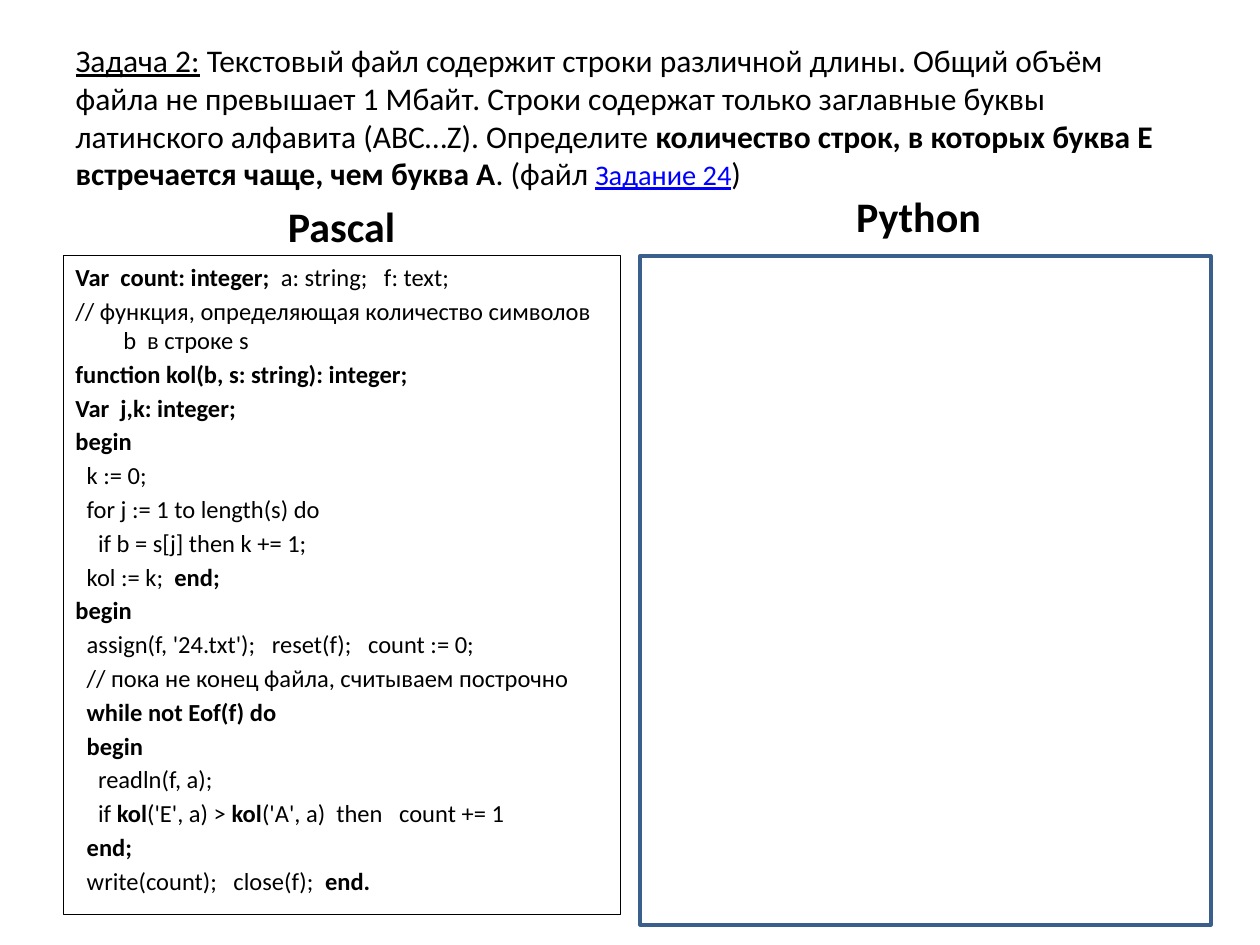
from dataclasses import dataclass

from pptx import Presentation
from pptx import util as u
from pptx.dml.color import RGBColor
from pptx.enum import shapes, text


@dataclass(frozen=True)
class Theme:
    font: str = "Calibri"
    ink: RGBColor = RGBColor(0x00, 0x00, 0x00)
    link: RGBColor = RGBColor(0x00, 0x00, 0xFF)
    paper: RGBColor = RGBColor(0xFF, 0xFF, 0xFF)
    frame: RGBColor = RGBColor(0x3A, 0x5F, 0x8C)
    task_size: float = 18
    link_size: float = 16.2
    heading_size: float = 24
    code_size: float = 14


THEME = Theme()

# Asterisks switch bold on and off; the number is the nesting level.
PASCAL_CODE = [
    (0, "*Var  count: integer;  *a: string;   f: text;"),
    (0, "// функция, определяющая количество символов b  в строке s"),
    (0, "*function kol(b, s: string): integer;"),
    (0, "*Var  j,k: integer;"),
    (0, "*begin"),
    (1, "k := 0;"),
    (1, "for j := 1 to length(s) do"),
    (2, "if b = s[j] then k += 1;"),
    (1, "kol := k;  *end;"),
    (0, "*begin"),
    (1, "assign(f, '24.txt');   reset(f);   count := 0;"),
    (1, "// пока не конец файла, считываем построчно"),
    (1, "*while not Eof(f) do"),
    (1, "*begin"),
    (2, "readln(f, a);"),
    (2, "if *kol*('E', a) > *kol*('A', a)  then   count += 1"),
    (1, "*end;"),
    (1, "write(count);   close(f);  *end."),
]


def add_run(paragraph, words, size, color=THEME.ink, bold=False, underline=False):
    run = paragraph.add_run()
    run.text = words
    font = run.font
    font.name, font.size = THEME.font, u.Pt(size)
    font.bold, font.underline = bold, underline
    font.color.rgb = color


def prepare_frame(shape, anchor):
    frame = shape.text_frame
    frame.word_wrap = True
    frame.auto_size = text.MSO_AUTO_SIZE.NONE
    frame.vertical_anchor = anchor
    return frame


def add_box(slide, box, fill, line, width):
    shape = slide.shapes.add_shape(shapes.MSO_SHAPE.RECTANGLE, *map(u.Inches, box))
    shape.shadow.inherit = False
    if fill is None:
        shape.fill.background()
    else:
        shape.fill.solid()
        shape.fill.fore_color.rgb = fill
    shape.line.color.rgb = line
    shape.line.width = u.Pt(width)
    return shape


def place_task(slide, box):
    title = slide.shapes.title
    title.left, title.top, title.width, title.height = map(u.Inches, box)
    paragraph = prepare_frame(title, text.MSO_ANCHOR.MIDDLE).paragraphs[0]
    paragraph.alignment = text.PP_ALIGN.LEFT
    size = THEME.task_size
    add_run(paragraph, "Задача 2:", size, underline=True)
    add_run(paragraph, " Текстовый файл содержит строки различной длины. "
            "Общий объём файла не превышает 1 Мбайт. Строки содержат только "
            "заглавные буквы латинского алфавита (ABC…Z). Определите ", size)
    add_run(paragraph, "количество строк, в которых буква E встречается чаще, "
            "чем буква A", size, bold=True)
    add_run(paragraph, ". (файл ", size)
    add_run(paragraph, "Задание 24", THEME.link_size, THEME.link, underline=True)
    add_run(paragraph, ")", size)


def place_heading(slide, box, words):
    shape = slide.shapes.add_textbox(*map(u.Inches, box))
    paragraph = prepare_frame(shape, text.MSO_ANCHOR.BOTTOM).paragraphs[0]
    paragraph.alignment = text.PP_ALIGN.CENTER
    add_run(paragraph, words, THEME.heading_size, bold=True)


def place_code(slide, box, lines):
    hanging, step = 0.38, 0.09
    shape = add_box(slide, box, None, THEME.ink, 0.25)
    frame = prepare_frame(shape, text.MSO_ANCHOR.TOP)
    for number, (level, line) in enumerate(lines):
        paragraph = frame.add_paragraph() if number else frame.paragraphs[0]
        paragraph.alignment = text.PP_ALIGN.LEFT
        paragraph.space_before = u.Pt(2.5 if number else 0)
        # Wrapped lines hang; each level moves the first line right
        properties = paragraph._p.get_or_add_pPr()
        properties.set("marL", str(u.Inches(hanging)))
        properties.set("indent", str(u.Inches(level * step - hanging)))
        for position, words in enumerate(line.split("*")):
            if words:
                add_run(paragraph, words, THEME.code_size, bold=position % 2 == 1)


def main():
    presentation = Presentation()
    presentation.slide_width, presentation.slide_height = u.Inches(10), u.Inches(7.5)
    slide = presentation.slides.add_slide(presentation.slide_layouts[5])
    left, right, column, top = 0.5, 5.08, 4.42, 2.03

    # Task statement
    place_task(slide, (left, 0.3, 9, 1.25))
    # Pascal column
    place_heading(slide, (left, 1.41, column, 0.63), "Pascal")
    place_code(slide, (left, top, column, 5.23), PASCAL_CODE)
    # Python column, left blank for the answer
    place_heading(slide, (right, 1.33, column, 0.63), "Python")
    add_box(slide, (right, top, 4.53, 5.31), THEME.paper, THEME.frame, 2)

    presentation.save("out.pptx")


if __name__ == "__main__":
    main()
